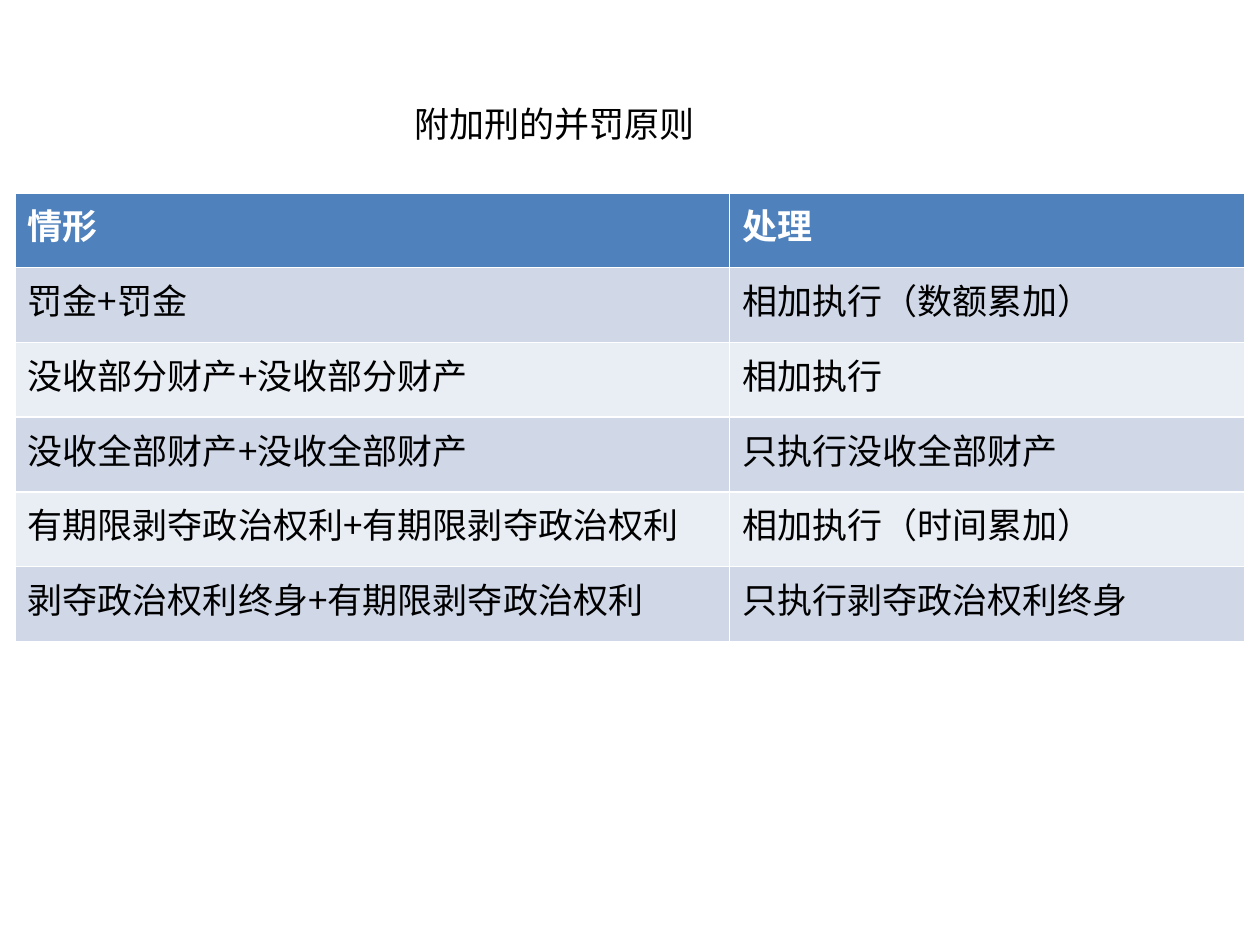
"""Build a slide with a table of the rules for combining supplementary penalties."""
from lxml import etree
from pptx import Presentation
from pptx.dml.color import RGBColor
from pptx.enum.text import MSO_ANCHOR, PP_ALIGN
from pptx.oxml.ns import qn
from pptx.util import Pt

JUSTIFY = PP_ALIGN.JUSTIFY
MIDDLE = MSO_ANCHOR.MIDDLE
FONT = "Noto Sans CJK SC"
HEADER_FILL = "4F81BD"
BAND_FILLS = ["E9EDF4", "D0D8E8"]
COLUMN_WIDTHS = [408.24, 294.48]
ROW_HEIGHT = 42.72
ROWS = [
    ("情形", "处理"),
    ("罚金+罚金", "相加执行（数额累加）"),
    ("没收部分财产+没收部分财产", "相加执行"),
    ("没收全部财产+没收全部财产", "只执行没收全部财产"),
    ("有期限剥夺政治权利+有期限剥夺政治权利", "相加执行（时间累加）"),
    ("剥夺政治权利终身+有期限剥夺政治权利", "只执行剥夺政治权利终身"),
]


def color(hex_string):
    return RGBColor.from_string(hex_string)


def add_run(paragraph, text, text_color, bold=False):
    run = paragraph.add_run()
    run.text = text
    run.font.size = Pt(20)
    run.font.bold = bold
    run.font.color.rgb = color(text_color)
    run.font.name = FONT
    east_asian = etree.SubElement(run.font._element, qn("a:ea"))
    east_asian.set("typeface", FONT)


presentation = Presentation()
presentation.slide_width = Pt(720)
presentation.slide_height = Pt(540)
slide = presentation.slides.add_slide(presentation.slide_layouts[5])

title = slide.shapes.title
title.left, title.top, title.width, title.height = Pt(206.64), Pt(54.72), Pt(360), Pt(31.68)
title.text_frame.vertical_anchor = MIDDLE
title.text_frame.margin_left = Pt(30)
title_paragraph = title.text_frame.paragraphs[0]
title_paragraph.alignment = JUSTIFY
add_run(title_paragraph, "附加刑的并罚原则", "000000")

table = slide.shapes.add_table(
    len(ROWS), len(COLUMN_WIDTHS), Pt(8.64), Pt(110.16),
    Pt(sum(COLUMN_WIDTHS)), Pt(ROW_HEIGHT * len(ROWS)),
).table
for column, width in zip(table.columns, COLUMN_WIDTHS):
    column.width = Pt(width)

for row_index, row_texts in enumerate(ROWS):
    is_header = row_index == 0
    table.rows[row_index].height = Pt(ROW_HEIGHT)
    for column_index, text in enumerate(row_texts):
        cell = table.cell(row_index, column_index)
        cell.fill.solid()
        cell.fill.fore_color.rgb = color(HEADER_FILL if is_header else BAND_FILLS[row_index % 2])
        add_run(cell.text_frame.paragraphs[0], text, "FFFFFF" if is_header else "000000", is_header)

presentation.save("out.pptx")
